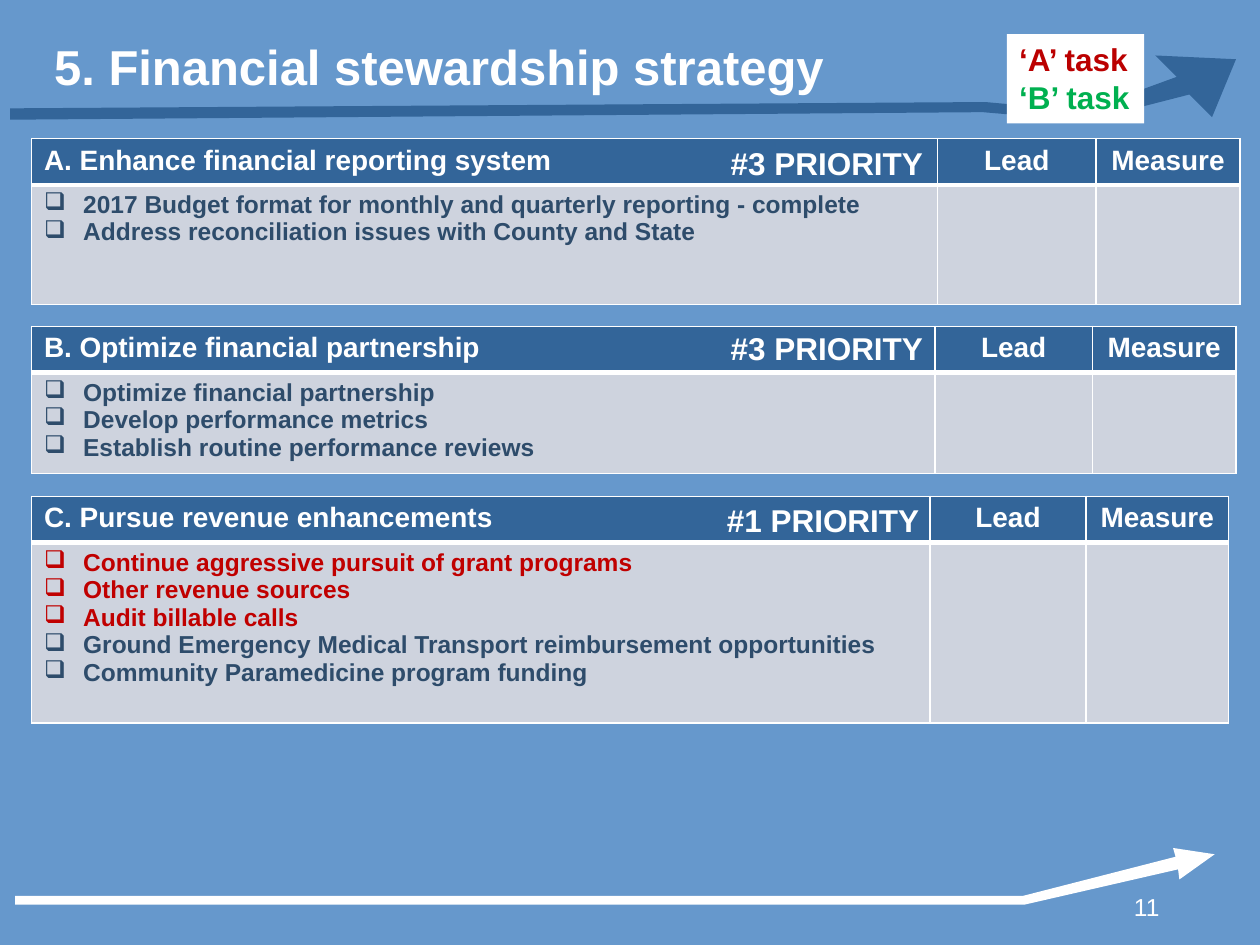
from lxml.etree import SubElement
from pptx import Presentation
from pptx.dml.color import RGBColor
from pptx.enum.shapes import MSO_SHAPE
from pptx.enum.text import MSO_ANCHOR, MSO_AUTO_SIZE, PP_ALIGN
from pptx.oxml.ns import qn
from pptx.util import Inches, Pt

COLORS = {
    "background": "6698CC",
    "header": "336599",
    "body": "CED3DE",
    "white": "FFFFFF",
    "task": "2E4C6B",
    "urgent task": "C00000",
    "legend A": "BB0000",
    "legend B": "00B050",
}
HEADER_HEIGHT = 0.35

# Outlines of the two arrows, in inches
ARROWS = [
    ("white", [(0.12, 7.11), (8.12, 7.11), (9.33, 6.8), (9.31, 6.73), (9.64, 6.78),
               (9.36, 6.98), (9.35, 6.9), (8.13, 7.18), (0.12, 7.18)]),
    ("header", [(0.08, 0.95), (7.8, 0.89), (8.62, 0.96), (9.44, 0.75), (9.62, 0.93),
                (9.81, 0.47), (9.17, 0.44), (9.34, 0.61), (8.6, 0.88), (7.82, 0.81),
                (0.08, 0.86)]),
]

# Each goal: heading, top, column widths, body height, tasks, number of urgent tasks
GOALS = [
    ("A. Enhance financial reporting system", 1.1, (7.19, 1.26, 1.14), 0.95,
     ["2017 Budget format for monthly and quarterly reporting - complete",
      "Address reconciliation issues with County and State"], 0),
    ("B. Optimize financial partnership", 2.59, (7.17, 1.25, 1.14), 0.75,
     ["Optimize financial partnership",
      "Develop performance metrics",
      "Establish routine performance reviews"], 0),
    ("C. Pursue revenue enhancements", 3.94, (7.13, 1.24, 1.13), 1.43,
     ["Continue aggressive pursuit of grant programs",
      "Other revenue sources",
      "Audit billable calls",
      "Ground Emergency Medical Transport reimbursement opportunities",
      "Community Paramedicine program funding"], 3),
]
PRIORITIES = [("#1 PRIORITY", 5.67, 3.93), ("#3 PRIORITY", 5.7, 2.56), ("#3 PRIORITY", 5.7, 1.09)]


def write(para, text, size, color, bold=True, align=PP_ALIGN.LEFT):
    para.text = text
    para.alignment = align
    font = para.runs[0].font
    font.name, font.size, font.bold = "Arial", Pt(size), bold
    font.color.rgb = RGBColor.from_string(COLORS[color])


def style_cell(cell, fill, top, bottom):
    """Fill a cell and give it white borders; top and bottom are widths in points."""
    properties = cell._tc.get_or_add_tcPr()
    for side, width in (("L", 1), ("R", 1), ("T", top), ("B", bottom)):
        line = SubElement(properties, qn(f"a:ln{side}"), w=str(Pt(width)))
        SubElement(SubElement(line, qn("a:solidFill")), qn("a:srgbClr"), val=COLORS["white"])
    cell.fill.solid()
    cell.fill.fore_color.rgb = RGBColor.from_string(COLORS[fill])


deck = Presentation()
deck.slide_width, deck.slide_height = Inches(10), Inches(7.5)
page = deck.slides.add_slide(deck.slide_layouts[5])
page.background.fill.solid()
page.background.fill.fore_color.rgb = RGBColor.from_string(COLORS["background"])

for color, points in ARROWS:
    start, *others = [(Inches(x), Inches(y)) for x, y in points]
    builder = page.shapes.build_freeform(*start)
    builder.add_line_segments(others, close=True)
    arrow = builder.convert_to_shape()
    arrow.shadow.inherit = False
    arrow.fill.solid()
    arrow.fill.fore_color.rgb = RGBColor.from_string(COLORS[color])
    arrow.line.fill.background()

title = page.shapes.title
title.left, title.top = Inches(0.33), Inches(0.21)
title.width, title.height = Inches(9.07), Inches(0.63)
title.text_frame.vertical_anchor = MSO_ANCHOR.MIDDLE
write(title.text_frame.paragraphs[0], "5. Financial stewardship strategy", 28, "white")

number = page.shapes.add_textbox(Inches(8.58), Inches(7.03), Inches(0.72), Inches(0.31))
number.text_frame.word_wrap = True
write(number.text_frame.paragraphs[0], "11", 14, "white", bold=False, align=PP_ALIGN.RIGHT)

for heading, top, widths, body_height, tasks, urgent_count in GOALS:
    frame = page.shapes.add_table(2, 3, Inches(0.25), Inches(top), Inches(sum(widths)),
                                  Inches(HEADER_HEIGHT + body_height))
    table = frame.table
    table.rows[0].height, table.rows[1].height = Inches(HEADER_HEIGHT), Inches(body_height)
    for index, (label, width) in enumerate(zip((heading, "Lead", "Measure"), widths)):
        table.columns[index].width = Inches(width)
        header, body = table.cell(0, index), table.cell(1, index)
        style_cell(header, "header", 1, 3)
        style_cell(body, "body", 3, 1)
        align = PP_ALIGN.CENTER if index else PP_ALIGN.LEFT
        write(header.text_frame.paragraphs[0], label, 16, "white", align=align)

    task_frame = table.cell(1, 0).text_frame
    for index, task in enumerate(tasks):
        para = task_frame.add_paragraph() if index else task_frame.paragraphs[0]
        write(para, task, 14, "urgent task" if index < urgent_count else "task")
        properties = para._p.get_or_add_pPr()
        properties.set("marL", str(Inches(0.31)))
        properties.set("indent", str(-Inches(0.31)))
        SubElement(properties, qn("a:buChar"), char="❑")

legend = page.shapes.add_shape(MSO_SHAPE.RECTANGLE, Inches(7.99), Inches(0.27),
                               Inches(1.09), Inches(0.71))
legend.shadow.inherit = False
legend.fill.solid()
legend.fill.fore_color.rgb = RGBColor.from_string(COLORS["white"])
legend.line.fill.background()
legend.text_frame.word_wrap = False
legend.text_frame.auto_size = MSO_AUTO_SIZE.SHAPE_TO_FIT_TEXT
legend.text_frame.vertical_anchor = MSO_ANCHOR.TOP
write(legend.text_frame.paragraphs[0], "‘A’ task", 18, "legend A")
write(legend.text_frame.add_paragraph(), "‘B’ task", 18, "legend B")

for text, left, top in PRIORITIES:
    box = page.shapes.add_textbox(Inches(left), Inches(top), Inches(1.74), Inches(0.4))
    box.text_frame.word_wrap = False
    box.text_frame.auto_size = MSO_AUTO_SIZE.SHAPE_TO_FIT_TEXT
    write(box.text_frame.paragraphs[0], text, 18, "white")

deck.save("out.pptx")
